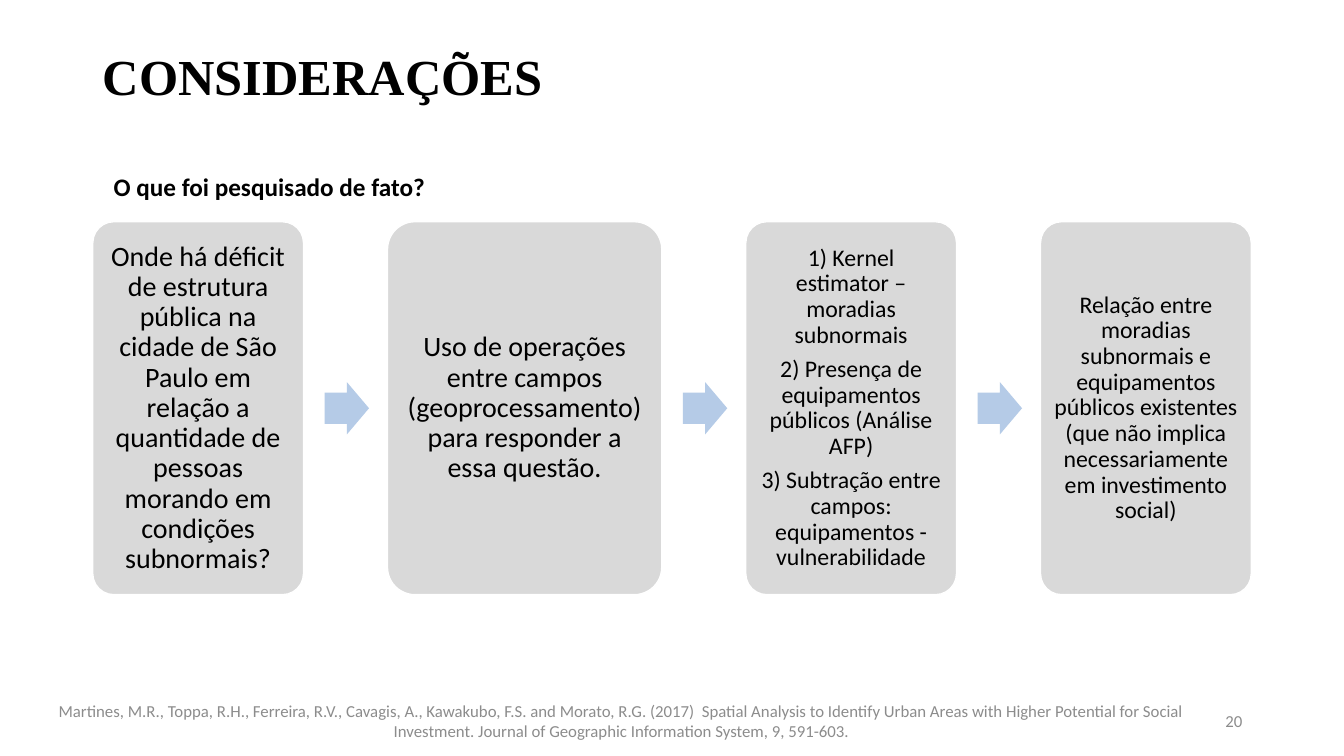
from dataclasses import dataclass

from pptx import Presentation
from pptx.dml.color import RGBColor
from pptx.enum.shapes import MSO_SHAPE as Shape
from pptx.enum.text import MSO_ANCHOR as Anchor, MSO_AUTO_SIZE as AutoSize, PP_ALIGN as Align
from pptx.util import Pt

PX = 9144  # 100 px to the inch


@dataclass(frozen=True)
class Theme:
    heading_font: str = "Times New Roman"
    body_font: str = "Calibri"
    ink: str = "000000"
    muted: str = "8C8C8C"
    paper: str = "FFFFFF"
    card: str = "D9D9D9"
    arrow: str = "B5CBE7"
    title_size: int = 36
    question_size: int = 18
    large_size: int = 20
    small_size: int = 17
    footer_size: int = 12


THEME = Theme()

TITLE = "CONSIDERAÇÕES"
QUESTION = "O que foi pesquisado de fato?"
CITATION = (
    "Martines, M.R., Toppa, R.H., Ferreira, R.V., Cavagis, A., Kawakubo, F.S. and "
    "Morato, R.G. (2017)  Spatial Analysis to Identify Urban Areas with Higher "
    "Potential for Social Investment. Journal of Geographic Information System, 9, 591-603."
)
PAGE_NUMBER = "20"

# width, type size, inset, paragraphs
STEPS = [
    (209, THEME.large_size, 8, [
        "Onde há déficit de estrutura pública na cidade de São Paulo em relação a "
        "quantidade de pessoas morando em condições subnormais?"]),
    (272, THEME.large_size, 8, [
        "Uso de operações entre campos (geoprocessamento) para responder a essa questão."]),
    (209, THEME.small_size, 7, [
        "1) Kernel estimator – moradias subnormais",
        "2) Presença de equipamentos públicos (Análise AFP)",
        "3) Subtração entre campos: equipamentos - vulnerabilidade"]),
    (209, THEME.small_size, 7, [
        "Relação entre moradias subnormais e equipamentos públicos existentes "
        "(que não implica necessariamente em investimento social)"]),
]


def emu(*lengths):
    return [round(length * PX) for length in lengths]


def rgb(code):
    return RGBColor.from_string(code)


def write(frame, paragraphs, size, color=THEME.ink, font=THEME.body_font, bold=False,
          align=Align.LEFT, anchor=Anchor.MIDDLE, leading=1.0, after=0):
    frame.word_wrap = True
    frame.vertical_anchor = anchor
    for index, text in enumerate(paragraphs):
        paragraph = frame.add_paragraph() if index else frame.paragraphs[0]
        paragraph.alignment = align
        paragraph.line_spacing = leading
        paragraph.space_before = Pt(0)
        paragraph.space_after = Pt(after)
        run = paragraph.add_run()
        run.text = text
        run.font.name = font
        run.font.size = Pt(size)
        run.font.bold = bold
        run.font.color.rgb = rgb(color)


def add_panel(slide, preset, box, fill, adjustments):
    panel = slide.shapes.add_shape(preset, *emu(*box))
    panel.shadow.inherit = False
    panel.fill.solid()
    panel.fill.fore_color.rgb = rgb(fill)
    panel.line.fill.background()
    for index, value in enumerate(adjustments):
        panel.adjustments[index] = value
    return panel


def add_title(slide, box):
    title = slide.shapes.title
    title.left, title.top, title.width, title.height = emu(*box)
    title.text_frame.auto_size = AutoSize.NONE
    write(title.text_frame, [TITLE], THEME.title_size, font=THEME.heading_font,
          bold=True, leading=0.9)


def add_question(slide, box):
    question = slide.shapes.add_textbox(*emu(*box))
    write(question.text_frame, [QUESTION], THEME.question_size, bold=True, anchor=Anchor.TOP)
    question.text_frame.auto_size = AutoSize.SHAPE_TO_FIT_TEXT


def add_card(slide, box, size, inset, paragraphs):
    card = add_panel(slide, Shape.ROUNDED_RECTANGLE, box, THEME.card, [0.1])
    card.line.color.rgb = rgb(THEME.paper)
    card.line.width = Pt(1)
    frame = card.text_frame
    (frame.margin_left, frame.margin_top,
     frame.margin_right, frame.margin_bottom) = emu(*[inset] * 4)
    write(frame, paragraphs, size, align=Align.CENTER, leading=0.9, after=round(0.35 * size))


def add_process(slide, box):
    """Spread the step cards evenly across the box, with an arrow in each gap."""
    left, top, width, height = box
    arrow_width, arrow_height, arrow_offset = 44, 52, 21
    gap = (width - sum(step[0] for step in STEPS)) / (len(STEPS) - 1)
    for index, (card_width, size, inset, paragraphs) in enumerate(STEPS):
        if index:
            arrow_box = (left - gap + arrow_offset, top + (height - arrow_height) / 2,
                         arrow_width, arrow_height)
            add_panel(slide, Shape.RIGHT_ARROW, arrow_box, THEME.arrow, [0.6, 0.5])
        add_card(slide, (left, top, card_width, height), size, inset, paragraphs)
        left += card_width + gap


def add_footer(slide, box):
    left, top, width, height = box
    number_width = 300
    citation = slide.shapes.add_textbox(*emu(left, top, 1161, height))
    write(citation.text_frame, [CITATION], THEME.footer_size, THEME.muted, align=Align.CENTER)
    number = slide.shapes.add_textbox(
        *emu(left + width - number_width, top, number_width, height))
    write(number.text_frame, [PAGE_NUMBER], THEME.footer_size, THEME.muted, align=Align.RIGHT)


def main():
    deck = Presentation()
    deck.slide_width, deck.slide_height = emu(1333, 750)
    title_only = deck.slide_layouts[5]
    slide = deck.slides.add_slide(title_only)
    add_title(slide, (92, 10, 1150, 137))
    add_process(slide, (92, 220, 1149, 370))
    add_footer(slide, (36, 695, 1206, 40))
    add_question(slide, (103, 165, 330, 40))
    deck.save("out.pptx")


if __name__ == "__main__":
    main()
